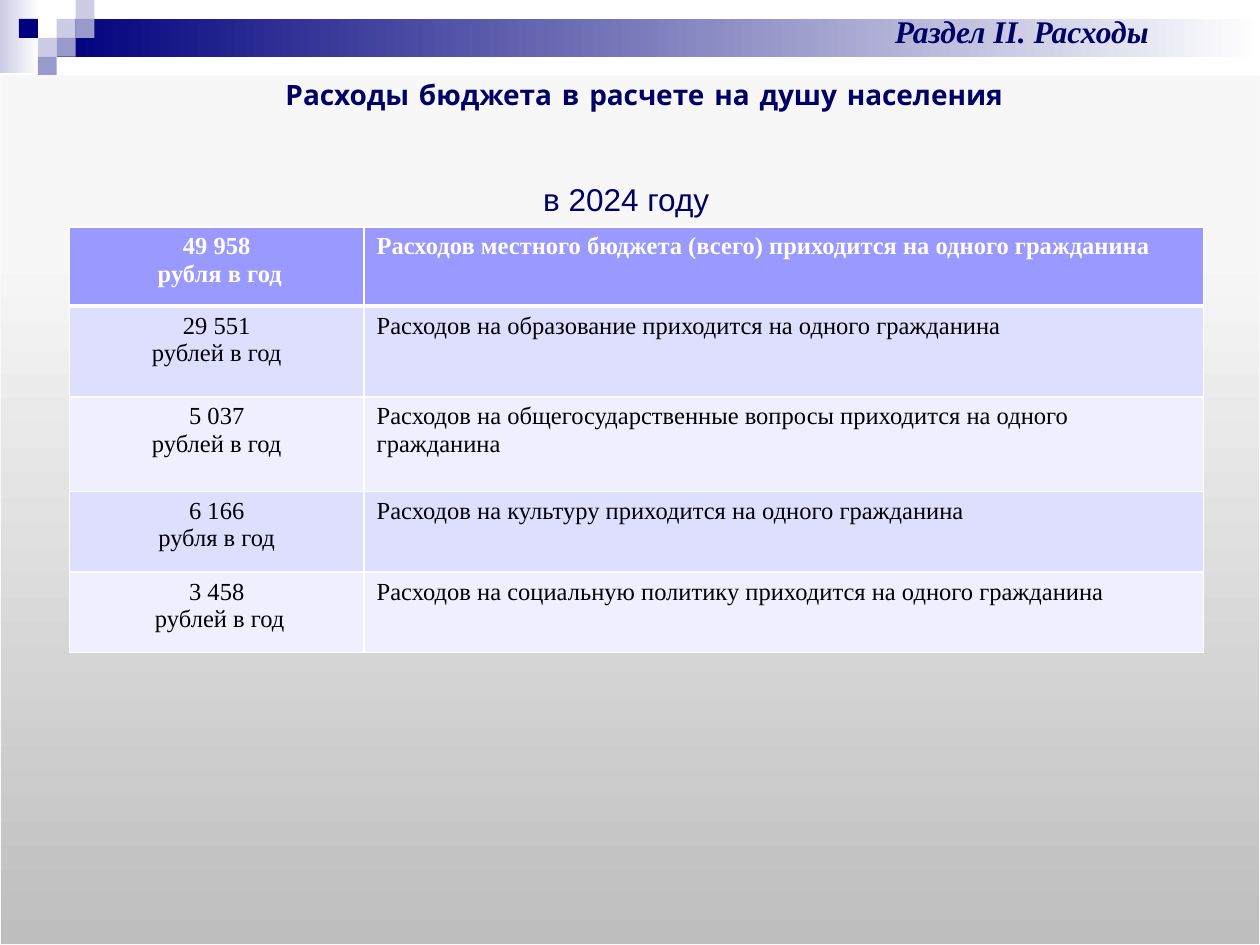
"""Build the slide on budget spending per resident."""
from copy import deepcopy
from typing import NamedTuple

from lxml import etree
from pptx import Presentation
from pptx.dml.color import RGBColor
from pptx.enum import shapes, text
from pptx.oxml import ns
from pptx.util import Inches, Pt

NAVY = RGBColor(0x00, 0x00, 0x7D)
INK = RGBColor(0x00, 0x00, 0x66)
LILAC = RGBColor(0xCC, 0xCC, 0xE6)
VIOLET = RGBColor(0x99, 0x99, 0xCC)
WHITE = RGBColor(0xFF, 0xFF, 0xFF)
BLACK = RGBColor(0x00, 0x00, 0x00)
GREY = RGBColor(0xBE, 0xBE, 0xBE)
PALE_GREY = RGBColor(0xF7, 0xF7, 0xF7)
PANEL_TOP = RGBColor(0xF8, 0xF8, 0xF8)
PANEL_LINE = RGBColor(0xF9, 0xF9, 0xF9)
HEADER = RGBColor(0x99, 0x99, 0xFF)
BANDS = (RGBColor(0xDE, 0xDE, 0xFF), RGBColor(0xEF, 0xEF, 0xFF))
SERIF = "Times New Roman"
SQUARE = 0.15


class Area(NamedTuple):
    left: float
    top: float
    width: float
    height: float

    def lengths(self) -> list:
        return [Inches(value) for value in self]


class Stop(NamedTuple):
    position: float
    color: RGBColor


class Square(NamedTuple):
    column: int
    row: int
    color: RGBColor


class Style(NamedTuple):
    font: str
    size: int
    color: RGBColor
    bold: bool = False
    italic: bool = False


class Spending(NamedTuple):
    amount: str
    unit: str
    purpose: str
    height: float


SQUARES = (
    Square(3, 1, LILAC), Square(4, 0, LILAC), Square(4, 1, VIOLET), Square(2, 2, LILAC),
    Square(1, 1, NAVY), Square(3, 2, VIOLET), Square(2, 3, VIOLET),
)
SPENDING = (
    Spending("49 958", " рубля в год",
             "Расходов местного бюджета (всего) приходится на одного гражданина", 0.63),
    Spending("29 551", "рублей в год",
             "Расходов на образование приходится на одного гражданина", 0.72),
    Spending("5 037", "рублей в год",
             "Расходов на общегосударственные вопросы приходится на одного гражданина", 0.75),
    Spending("6 166", "рубля в год",
             "Расходов на культуру приходится на одного гражданина", 0.64),
    Spending("3 458", " рублей в год",
             "Расходов на социальную политику приходится на одного гражданина", 0.64),
)


def add_block(page, area: Area, kind=shapes.MSO_SHAPE.RECTANGLE):
    block = page.shapes.add_shape(kind, *area.lengths())
    block.shadow.inherit = False
    block.line.fill.background()
    return block


def fill_gradient(block, stops: tuple, angle: float) -> None:
    block.fill.gradient()
    block.fill.gradient_angle = angle
    last = block.fill.gradient_stops[-1]._gs
    for _ in stops[2:]:
        last.addnext(deepcopy(last))
    for target, stop in zip(block.fill.gradient_stops, stops):
        target.position = stop.position
        target.color.rgb = stop.color


def write(frame, lines: tuple, style: Style, align) -> None:
    frame.text = "\n".join(lines)
    frame.word_wrap = True
    for para in frame.paragraphs:
        para.alignment = align
        para.font.name = style.font
        para.font.size = Pt(style.size)
        para.font.color.rgb = style.color
        para.font.bold = style.bold
        para.font.italic = style.italic


def add_label(page, area: Area, line: str, style: Style) -> None:
    box = page.shapes.add_textbox(*area.lengths())
    write(box.text_frame, (line,), style, text.PP_ALIGN.CENTER)


def set_borders(cell, bottom: float) -> None:
    properties = cell._tc.get_or_add_tcPr()
    widths = {"a:lnL": 1, "a:lnR": 1, "a:lnT": 1, "a:lnB": bottom}
    for index, (side, width) in enumerate(widths.items()):
        line = etree.Element(ns.qn(side), w=str(Pt(width)))
        solid = etree.SubElement(line, ns.qn("a:solidFill"))
        etree.SubElement(solid, ns.qn("a:srgbClr"), val=str(WHITE))
        properties.insert(index, line)


def add_spending_table(page) -> None:
    area = Area(0.55, 1.8, 9, sum(item.height for item in SPENDING))
    table = page.shapes.add_table(len(SPENDING), 2, *area.lengths()).table
    for column, width in zip(table.columns, (2.34, 6.66)):
        column.width = Inches(width)
    for index, item in enumerate(SPENDING):
        table.rows[index].height = Inches(item.height)
        is_header = index == 0
        style = Style(SERIF, 14, WHITE if is_header else BLACK, is_header)
        contents = (
            ((item.amount, item.unit), text.PP_ALIGN.CENTER),
            ((item.purpose,), text.PP_ALIGN.LEFT),
        )
        for cell, (lines, align) in zip(table.rows[index].cells, contents):
            write(cell.text_frame, lines, style, align)
            cell.fill.solid()
            cell.fill.fore_color.rgb = HEADER if is_header else BANDS[(index - 1) % 2]
            set_borders(cell, 3 if is_header else 1)


def add_backdrop(page) -> None:
    corner = add_block(page, Area(0, 0, 0.31, 0.58))
    fill_gradient(corner, (Stop(0, LILAC), Stop(1, WHITE)), 0)
    band = add_block(page, Area(0.45, 0.15, 9.55, 0.3))
    fill_gradient(band, (Stop(0, NAVY), Stop(1, WHITE)), 0)
    for square in SQUARES:
        area = Area(square.column * SQUARE, square.row * SQUARE, SQUARE, SQUARE)
        tile = add_block(page, area)
        tile.fill.solid()
        tile.fill.fore_color.rgb = square.color
    panel = add_block(page, Area(0, 0.6, 10, 6.9), shapes.MSO_SHAPE.FLOWCHART_PROCESS)
    fill_gradient(panel, (Stop(0, GREY), Stop(0.8, PALE_GREY), Stop(1, PANEL_TOP)), 90)
    panel.line.color.rgb = PANEL_LINE
    panel.line.width = Pt(0.75)


def place_title(page) -> None:
    title = page.shapes.title
    title.left, title.top, title.width, title.height = Area(-0.03, 1.31, 10, 0.54).lengths()
    write(title.text_frame, ("в 2024 году",), Style("Arial", 18, INK), text.PP_ALIGN.CENTER)
    title.text_frame.vertical_anchor = text.MSO_ANCHOR.MIDDLE
    page.shapes._spTree.append(title._element)


def main() -> None:
    deck = Presentation()
    deck.slide_width, deck.slide_height = Inches(10), Inches(7.5)
    page = deck.slides.add_slide(deck.slide_layouts.get_by_name("Title Only"))
    add_backdrop(page)
    place_title(page)
    add_spending_table(page)
    add_label(page, Area(6.26, 0.05, 3.7, 0.4), "Раздел II. Расходы",
              Style(SERIF, 18, INK, True, True))
    add_label(page, Area(0.87, 0.57, 8.49, 0.37), "Расходы бюджета в расчете на душу населения",
              Style("Comic Neue", 16, INK, True))
    deck.save("out.pptx")


if __name__ == "__main__":
    main()
